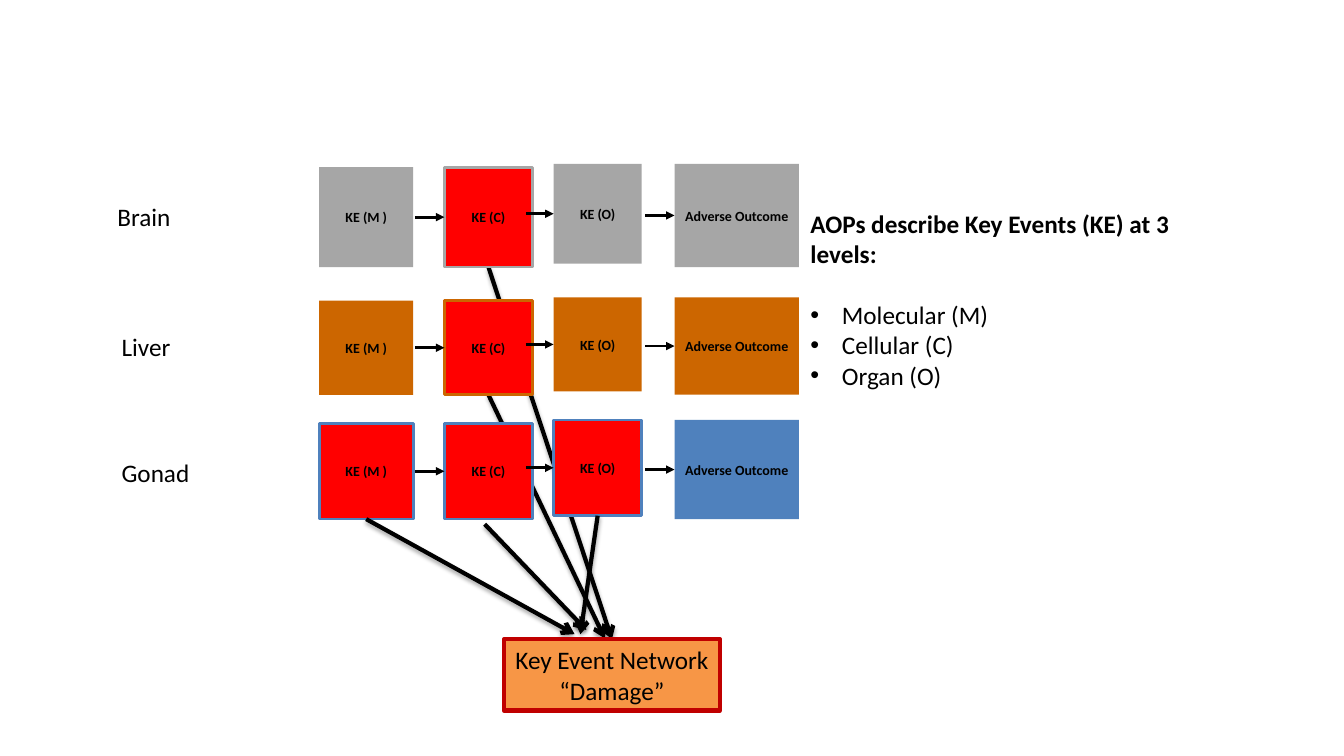
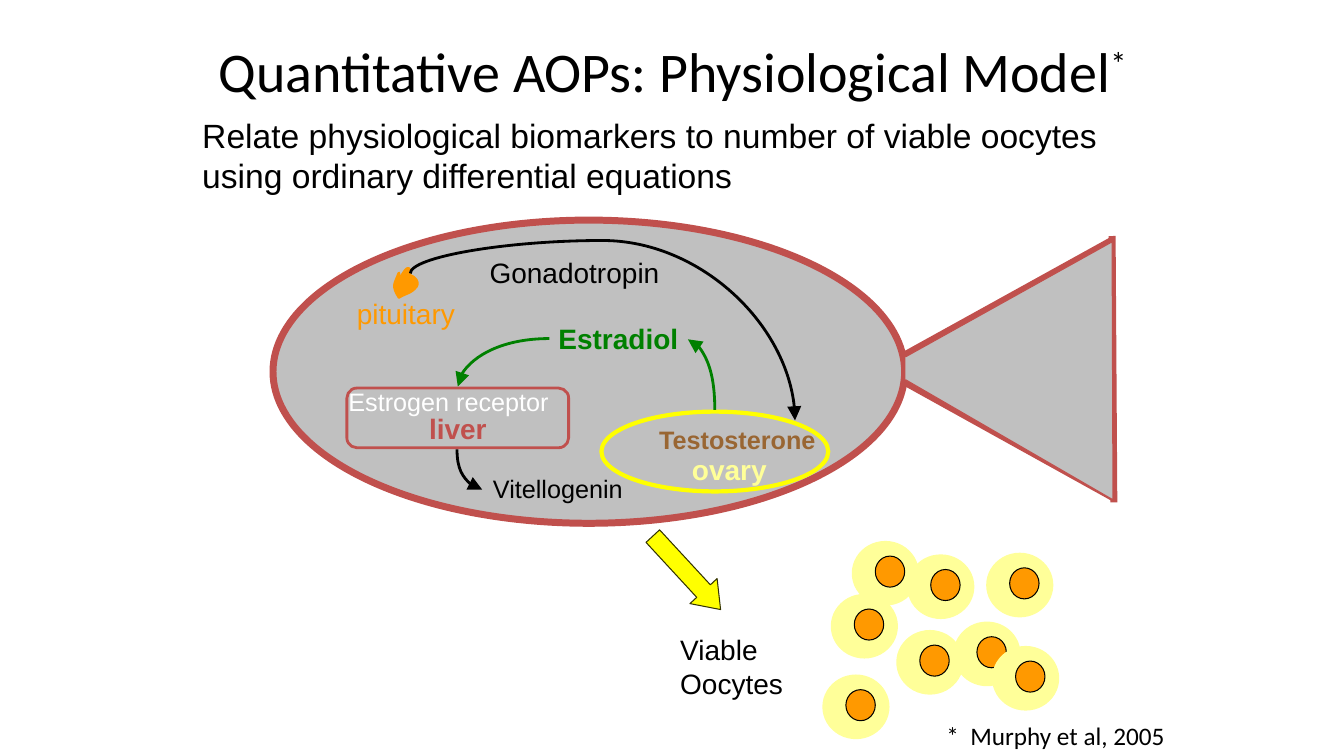
from dataclasses import dataclass
from typing import NamedTuple, Optional

from lxml.etree import SubElement
from pptx import Presentation
from pptx.dml.color import RGBColor
from pptx.enum.shapes import MSO_CONNECTOR, MSO_SHAPE
from pptx.enum.text import MSO_ANCHOR, MSO_AUTO_SIZE, PP_ALIGN
from pptx.oxml.ns import qn
from pptx.shapes.autoshape import Shape
from pptx.shapes.connector import Connector
from pptx.slide import Slide
from pptx.text.text import TextFrame, _Paragraph
from pptx.util import Emu, Pt

# The slide is a grid of 160 columns by 90 rows of square cells.
COLUMNS, ROWS, CELL = 160, 90, 76200
TOP, LEFT, BOTTOM, RIGHT = range(4)
COLORS = {
    "black": "000000", "white": "FFFFFF", "red": "FF0000", "brain": "A6A6A6",
    "liver": "CC6600", "gonad": "4F81BD", "network": "F79646", "border": "C00000",
    "fish": "C0C0C0", "outline": "C0504D", "yellow": "FFFF00", "olive": "333300",
    "cream": "FFFF99", "orange": "FF9900", "green": "008000", "brown": "996633",
}
Point = tuple[float, float]


class Area(NamedTuple):
    x: float
    y: float
    w: float
    h: float


class Stroke(NamedTuple):
    color: str
    width: float


@dataclass(frozen=True)
class Style:
    size: float
    font: str = "Calibri"
    color: str = "black"
    bold: bool = False


@dataclass(frozen=True)
class Label:
    area: Area
    lines: tuple[str, ...]
    style: Style


@dataclass(frozen=True)
class Pathway:
    organ: str
    organ_at: Point
    color: str
    top: float
    height: float
    damaged: tuple[str, ...]


@dataclass(frozen=True)
class Curve:
    """A curved arrow: its frame before rotation, and its preset."""
    frame: Area
    rotation: int
    flip: str
    preset: str
    stroke: Stroke
    bend: Optional[int] = None


STEP_COLUMNS = {
    "KE (M )": (38, 11.2), "KE (C)": (52.9, 10.5),
    "KE (O)": (65.9, 10.5), "Adverse Outcome": (80.3, 14.8),
}
MOLECULAR, CELLULAR, ORGAN, OUTCOME = STEP_COLUMNS
RAISE = 0.4
PATHWAYS = (
    Pathway("Brain", (12.8, 23.4), "brain", 19.9, 11.9, (CELLULAR,)),
    Pathway("Liver", (13.3, 38.8), "liver", 35.8, 11.2, (CELLULAR,)),
    Pathway("Gonad", (13.3, 53.8), "gonad", 50.4, 11.4, (MOLECULAR, CELLULAR, ORGAN)),
)
STEP_STYLE = Style(10, bold=True)
BODY = Style(18)
THIN, THICK = Stroke("black", 2), Stroke("black", 3)

OOCYTES = ((106.7, 75), (113.5, 74), (108, 66), (97.9, 80.3),
           (101.4, 64.4), (118.1, 76.9), (98.9, 70.7), (117.4, 65.8))
TAIL = ((107.8, 42.5), (132.4, 28.8), (132.5, 59.5), (107.8, 45.2))
TAIL_EDGES = (((107.8, 42.2), (132.4, 28.6)), ((132.6, 59.3), (107.9, 45.6)),
              ((132.4, 28.1), (132.6, 59.8)))
PITUITARY_START = (47.5, 32.5)
PITUITARY_CURVES = (
    ((47, 33.8), (46.6, 34), (47.5, 35.4)),
    ((48.1, 35), (48.8, 34.9), (49.3, 34.4)),
    ((50.2, 33.7), (49.3, 32.9), (48.8, 32.8)),
    ((48.8, 32.5), (48.8, 32.2), (48.7, 32)),
    ((48.4, 31.7), (47.9, 32.8), (47.8, 32.8)),
    ((47, 33.6), (47.3, 33), (47.5, 32.5)),
)
HORMONE = Stroke("green", 2)
CURVES = (
    Curve(Area(63, 18.4, 17.5, 45.8), 90, "flipV", "curvedConnector3", THIN, -22400),
    Curve(Area(79.3, 43, 8.4, 3.2), 90, "flipH", "curvedConnector2", HORMONE),
    Curve(Area(54.5, 40.3, 10.9, 5.7), 180, "flipV", "curvedConnector2", HORMONE),
    Curve(Area(53.5, 54.4, 4.8, 3), 270, "flipH", "curvedConnector2", THIN),
)
FISH_LABELS = (
    Label(Area(22.9, 13.1, 114, 10.9),
          ("Relate physiological biomarkers to number of viable oocytes",
           "using ordinary differential equations"), Style(24, "Arial")),
    Label(Area(79.8, 74.7, 17, 9.2), ("Viable", "Oocytes"), Style(20, "Arial")),
    Label(Area(41.3, 34.7, 16, 5.3), ("pituitary",), Style(20, "Arial", "orange")),
    Label(Area(81.2, 53.3, 13, 5.2), ("ovary",), Style(20, "Arial", "cream", True)),
    Label(Area(57.1, 29.8, 24, 5.3), ("Gonadotropin",), Style(20, "Arial")),
    Label(Area(65.3, 37.7, 18, 5.2), ("Estradiol",), Style(20, "Arial", "green", True)),
    Label(Area(49.9, 48.4, 12, 5.2), ("liver",), Style(20, "Arial", "outline", True)),
    Label(Area(77.3, 49.9, 23, 4.8), ("Testosterone",), Style(18, "Arial", "brown", True)),
    Label(Area(40.3, 45.4, 28, 4.8), ("Estrogen receptor",), Style(18, "Arial", "white")),
    Label(Area(57.5, 55.7, 20, 4.8), ("Vitellogenin",), Style(18, "Arial")),
    Label(Area(111.5, 85.2, 30, 4.8), ("*  Murphy et al, 2005",), BODY),
)


def cells(*lengths: float) -> list[Emu]:
    return [Emu(round(length * CELL)) for length in lengths]


def rgb(name: str) -> RGBColor:
    return RGBColor.from_string(COLORS[name])


def paint(shape: Shape, fill: Optional[str], stroke: Optional[Stroke]) -> None:
    shape.shadow.inherit = False
    if fill:
        shape.fill.solid()
        shape.fill.fore_color.rgb = rgb(fill)
    else:
        shape.fill.background()
    if stroke:
        shape.line.color.rgb = rgb(stroke.color)
        shape.line.width = Pt(stroke.width)
    else:
        shape.line.fill.background()


def add_run(paragraph: _Paragraph, text: str, style: Style, baseline: int = 0) -> None:
    run = paragraph.add_run()
    run.text = text
    run.font.size, run.font.name, run.font.bold = Pt(style.size), style.font, style.bold
    run.font.color.rgb = rgb(style.color)
    if baseline:
        run.font._element.set("baseline", str(baseline))


def write(frame: TextFrame, lines: tuple[str, ...], style: Style,
          align: PP_ALIGN = PP_ALIGN.LEFT) -> None:
    frame.word_wrap = False
    for index, line in enumerate(lines):
        paragraph = frame.add_paragraph() if index else frame.paragraphs[0]
        paragraph.alignment = align
        add_run(paragraph, line, style)


def add_block(slide: Slide, kind: MSO_SHAPE, area: Area, fill: Optional[str] = None,
              stroke: Optional[Stroke] = None) -> Shape:
    block = slide.shapes.add_shape(kind, *cells(*area))
    paint(block, fill, stroke)
    block.text_frame.vertical_anchor = MSO_ANCHOR.MIDDLE
    return block


def add_label(slide: Slide, label: Label) -> TextFrame:
    frame = slide.shapes.add_textbox(*cells(*label.area)).text_frame
    write(frame, label.lines, label.style)
    frame.auto_size = MSO_AUTO_SIZE.SHAPE_TO_FIT_TEXT
    return frame


def add_line(slide: Slide, start: Point, end: Point, stroke: Stroke, head: str = "",
             head_size: str = "med", shadow: bool = False,
             kind: MSO_CONNECTOR = MSO_CONNECTOR.STRAIGHT) -> Connector:
    line = slide.shapes.add_connector(kind, *cells(*start, *end))
    line.line.color.rgb = rgb(stroke.color)
    line.line.width = Pt(stroke.width)
    properties = line.element.spPr
    if head:
        SubElement(properties.find(qn("a:ln")), qn("a:tailEnd"), type=head,
                   w=head_size, len=head_size)
    effects = SubElement(properties, qn("a:effectLst"))
    if shadow:
        cast = SubElement(effects, qn("a:outerShdw"), blurRad=str(Pt(3.1)),
                          dist=str(Pt(1.8)), dir="5400000", rotWithShape="0")
        tint = SubElement(cast, qn("a:srgbClr"), val=COLORS["black"])
        SubElement(tint, qn("a:alpha"), val="35000")
    return line


def add_curve(slide: Slide, curve: Curve) -> None:
    x, y, w, h = curve.frame
    line = add_line(slide, (x, y), (x + w, y + h), curve.stroke, "triangle", "lg",
                    kind=MSO_CONNECTOR.CURVE)
    frame = line.element.spPr.find(qn("a:xfrm"))
    frame.set("rot", str(curve.rotation * 60000))
    frame.set(curve.flip, "1")
    geometry = line.element.spPr.find(qn("a:prstGeom"))
    geometry.set("prst", curve.preset)
    if curve.bend is not None:
        SubElement(geometry.find(qn("a:avLst")), qn("a:gd"), name="adj1",
                   fmla=f"val {curve.bend}")


def add_outline(slide: Slide, points: list[Point], fill: str, stroke: Stroke,
                close: bool) -> None:
    corners = [tuple(cells(*point)) for point in points]
    builder = slide.shapes.build_freeform(*corners[0])
    builder.add_line_segments(corners[1:], close=close)
    paint(builder.convert_to_shape(), fill, stroke)


def bezier_points(start: Point, curves: tuple, steps: int = 8) -> list[Point]:
    """Sample a chain of cubic curves, each given as two controls and an end."""
    points = [start]
    for first, second, end in curves:
        origin = points[-1]
        for step in range(1, steps + 1):
            t = step / steps
            weights = ((1 - t) ** 3, 3 * t * (1 - t) ** 2, 3 * t * t * (1 - t), t ** 3)
            points.append(tuple(sum(weight * value for weight, value in zip(weights, axis))
                                for axis in zip(origin, first, second, end)))
    return points


def add_pathway(slide: Slide, pathway: Pathway) -> dict[str, Shape]:
    steps = {}
    for name, (x, width) in STEP_COLUMNS.items():
        top = pathway.top - (RAISE if name in (ORGAN, OUTCOME) else 0)
        height = pathway.height + (RAISE if name == OUTCOME else 0)
        damaged = name in pathway.damaged
        steps[name] = add_block(slide, MSO_SHAPE.RECTANGLE, Area(x, top, width, height),
                                "red" if damaged else pathway.color,
                                Stroke(pathway.color, 2) if damaged else None)
        write(steps[name].text_frame, (name,), STEP_STYLE, PP_ALIGN.CENTER)
    middle = pathway.top + pathway.height / 2
    for start, y, target in ((49.4, middle, CELLULAR), (62.6, middle - RAISE, ORGAN),
                             (76.8, middle - RAISE / 2, OUTCOME)):
        arrow = add_line(slide, (start, y), (STEP_COLUMNS[target][0], y), THIN, "triangle")
        arrow.end_connect(steps[target], LEFT)
    add_label(slide, Label(Area(*pathway.organ_at, 13, 4.8), (pathway.organ,), BODY))
    return steps


def build_network_slide(slide: Slide) -> None:
    def damage_arrow(start: Point, end: Point) -> Connector:
        return add_line(slide, start, end, THICK, "arrow", shadow=True)

    from_liver = damage_arrow((58.1, 47), (72, 76))
    from_brain = damage_arrow((58.1, 31.8), (72.8, 76))
    brain, liver, gonad = [add_pathway(slide, pathway) for pathway in PATHWAYS]
    from_molecular = damage_arrow((43.6, 61.8), (68.4, 75.5))
    from_organ = damage_arrow((71.1, 61.4), (69.1, 75.5))
    damage_arrow((57.7, 62.4), (69.8, 75))
    for arrow, source in ((from_liver, liver[CELLULAR]), (from_brain, brain[CELLULAR]),
                          (from_molecular, gonad[MOLECULAR]), (from_organ, gonad[ORGAN])):
        arrow.begin_connect(source, BOTTOM)

    network = add_block(slide, MSO_SHAPE.RECTANGLE, Area(60, 76.1, 25.7, 8.5),
                        "network", Stroke("border", 3))
    write(network.text_frame, ("Key Event Network", "“Damage”"), BODY, PP_ALIGN.CENTER)
    from_brain.end_connect(network, TOP)

    levels = add_label(slide, Label(Area(95.3, 24.2, 46, 23),
                                    ("AOPs describe Key Events (KE) at 3 levels:",),
                                    Style(18, bold=True)))
    levels.word_wrap = True
    for index, level in enumerate(("Molecular (M)", "Cellular (C)", "Organ (O)")):
        paragraph = levels.add_paragraph()
        if index == 0:
            paragraph.space_before = Pt(22)
        add_run(paragraph, level, BODY)
        properties = paragraph._p.get_or_add_pPr()
        properties.set("marL", "285750")
        properties.set("indent", "-285750")
        SubElement(properties, qn("a:buFont"), typeface="Arial")
        SubElement(properties, qn("a:buChar"), char="•")


def build_fish_slide(slide: Slide) -> None:
    title = add_block(slide, MSO_SHAPE.RECTANGLE, Area(20, 0, 120, 16.7), "white")
    tint = title.element.spPr.find(qn("a:solidFill")).find(qn("a:srgbClr"))
    SubElement(tint, qn("a:alpha"), val="33000")
    write(title.text_frame, (" Quantitative AOPs: Physiological Model",), Style(40),
          PP_ALIGN.CENTER)
    add_run(title.text_frame.paragraphs[0], "*", Style(40), baseline=30000)
    add_run(title.text_frame.paragraphs[0], " ", Style(36))

    release = add_block(slide, MSO_SHAPE.RIGHT_ARROW, Area(75.8, 66, 11.9, 4.4),
                        "yellow", Stroke("olive", 0.75))
    release.rotation = 47.3
    release.adjustments[1] = 0.68
    for x, y in OOCYTES:
        add_block(slide, MSO_SHAPE.OVAL, Area(x, y, 8, 7.7), "cream")
        add_block(slide, MSO_SHAPE.OVAL, Area(x + 2.8, y + 1.8, 3.5, 3.7),
                  "orange", Stroke("black", 0.75))

    outline = Stroke("outline", 5)
    add_block(slide, MSO_SHAPE.OVAL, Area(32.5, 26.2, 75.2, 36.1), "fish", outline)
    for start, end in TAIL_EDGES:
        add_line(slide, start, end, outline)
    add_outline(slide, list(TAIL), "fish", Stroke("outline", 0.75), close=False)
    add_outline(slide, bezier_points(PITUITARY_START, PITUITARY_CURVES), "orange",
                Stroke("orange", 2), close=True)
    add_block(slide, MSO_SHAPE.OVAL, Area(71.6, 49, 27, 9.5), None, Stroke("yellow", 3))
    add_block(slide, MSO_SHAPE.ROUNDED_RECTANGLE, Area(41.3, 46.2, 26.4, 7.1), None,
              Stroke("outline", 2))
    for curve in CURVES:
        add_curve(slide, curve)
    for label in FISH_LABELS:
        add_label(slide, label)


def main() -> None:
    deck = Presentation()
    deck.slide_width, deck.slide_height = cells(COLUMNS, ROWS)
    for build in (build_network_slide, build_fish_slide):
        build(deck.slides.add_slide(deck.slide_layouts[6]))
    deck.save("out.pptx")


if __name__ == "__main__":
    main()
